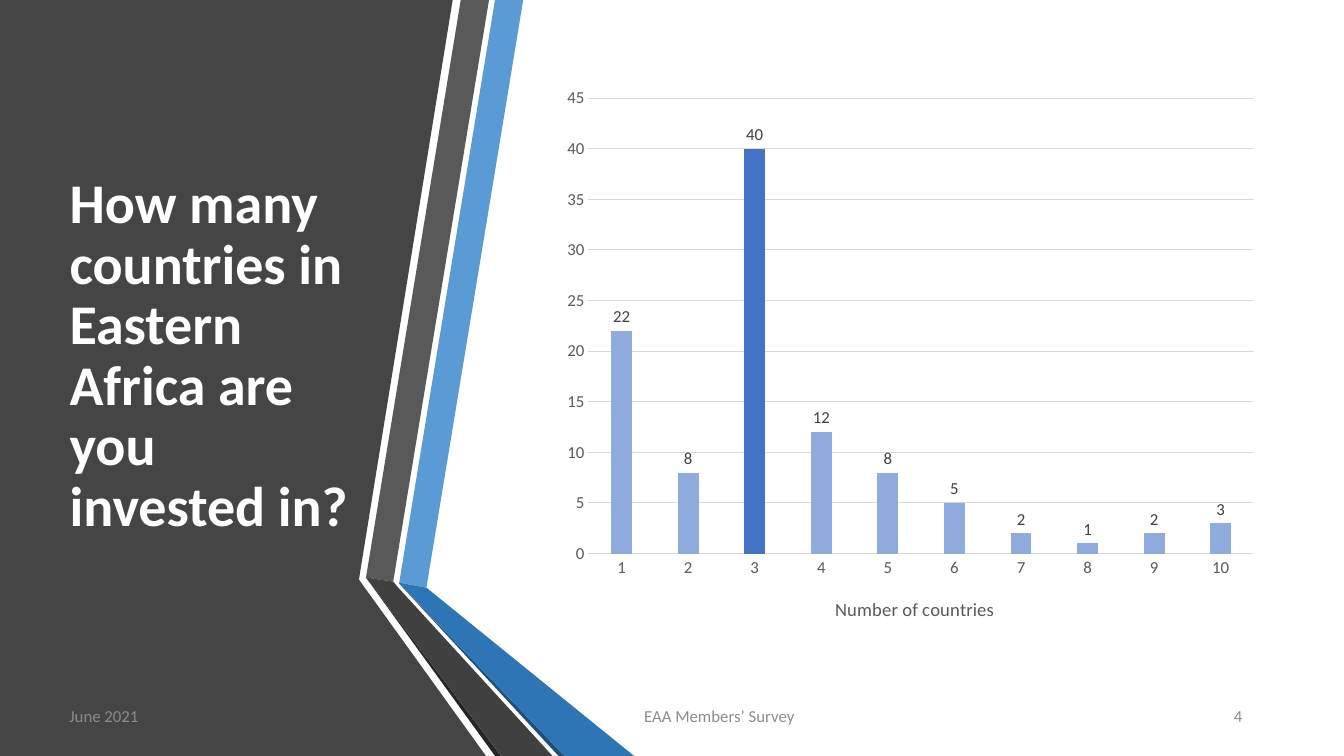
from lxml import etree
from pptx import Presentation
from pptx import util as u
from pptx.chart import data
from pptx.dml.color import RGBColor
from pptx.enum import chart as ch, text

Inches = u.Inches


def color(fmt, hue):
    fmt.solid()
    fmt.fore_color.rgb = RGBColor.from_string(hue)


def write(frame, words, size=12, hue="8C8C8C", bold=False, align="LEFT", after=6, line=1.0):
    frame.word_wrap = True
    frame.auto_size = text.MSO_AUTO_SIZE.NONE
    frame.vertical_anchor = text.MSO_ANCHOR.MIDDLE
    para = frame.paragraphs[0]
    para.alignment = getattr(text.PP_ALIGN, align)
    para.space_before, para.space_after = u.Pt(0), u.Pt(after)
    para.line_spacing = line
    run = para.add_run()
    run.text = words
    run.font.name, run.font.size, run.font.bold = "Calibri", u.Pt(size), bold
    color(run.font.fill, hue)


prs = Presentation()
prs.slide_width, prs.slide_height = Inches(13.33), Inches(7.5)
slide = prs.slides.add_slide(prs.slide_layouts[5])
color(slide.background.fill, "FFFFFF")

# Dark panel, then the folded ribbons as one group
panel = [("454545", [(0, 0), (4.49, 0), (3.56, 5.75), (4.82, 7.5), (0, 7.5)])]
folds = [
    ("5B9BD5", [(3.96, 5.78), (4.23, 5.83), (5.19, 0), (4.91, 0)]),
    ("595959", [(4.85, 0), (4.57, 0), (3.63, 5.73), (3.9, 5.77)]),
    ("262626", [(3.63, 5.73), (4.91, 7.5), (4.97, 7.5)]),
    ("1F4E79", [(3.96, 5.79), (5.54, 7.5), (5.6, 7.5)]),
    ("2E75B6", [(3.96, 5.79), (5.6, 7.5), (6.29, 7.5), (4.23, 5.83), (3.96, 5.78)]),
    ("404040", [(5.48, 7.5), (3.95, 5.83), (3.9, 5.77), (3.63, 5.73), (4.97, 7.5)]),
]
group = slide.shapes.add_group_shape()
for home, parts in ((slide.shapes, panel), (group.shapes, folds)):
    for hue, dots in parts:
        dots = [(Inches(x), Inches(y)) for x, y in dots]
        build = home.build_freeform(*dots[0])
        build.add_line_segments(dots[1:], close=True)
        shape = build.convert_to_shape()
        shape.shadow.inherit = False
        color(shape.fill, hue)
        shape.line.fill.background()

# Title, brought in front of the panel
title = slide.shapes.title
title.left, title.top = Inches(0.59), Inches(0.75)
title.width, title.height = Inches(3.04), Inches(5.58)
write(title.text_frame, "How many countries in Eastern Africa are you invested in?",
      size=40, hue="FFFFFF", bold=True, after=0, line=0.9)
tree = title._element.getparent()
tree.append(title._element)

# Footer line
for words, left, width, align in (
    ("June 2021", 0.59, 3.33, "LEFT"),
    ("EAA Members’ Survey", 6.29, 4.26, "LEFT"),
    ("4", 11.23, 1.19, "RIGHT"),
):
    box = slide.shapes.add_textbox(Inches(left), Inches(6.9), Inches(width), Inches(0.4))
    write(box.text_frame, words, align=align)

# Column chart
info = data.CategoryChartData()
info.categories = [str(n) for n in range(1, 11)]
info.add_series("Series 1", (22, 8, 40, 12, 8, 5, 2, 1, 2, 3))
chart = slide.shapes.add_chart(ch.XL_CHART_TYPE.COLUMN_CLUSTERED, Inches(5.48), Inches(0.75),
                               Inches(7.1), Inches(5.58), info).chart
chart.has_legend = chart.has_title = False
chart.font.name, chart.font.size = "Calibri", u.Pt(10)
color(chart.font.fill, "000000")

plot = chart.plots[0]
plot.gap_width, plot.overlap, plot.vary_by_categories = 219, -27, False
bars = plot.series[0]
color(bars.format.fill, "8FAADC")
color(bars.points[2].format.fill, "4472C4")
labels = bars.data_labels
labels.show_value = True
labels.position = ch.XL_LABEL_POSITION.OUTSIDE_END

# Axes
cats, vals = chart.category_axis, chart.value_axis
for part, hue in ((cats.tick_labels, "595959"), (vals.tick_labels, "595959"), (labels, "404040")):
    part.font.name, part.font.size = "Calibri", u.Pt(12)
    color(part.font.fill, hue)
for axis in (cats, vals):
    axis.major_tick_mark = axis.minor_tick_mark = ch.XL_TICK_MARK.NONE
vals.minimum_scale, vals.maximum_scale, vals.major_unit = 0, 45, 5
vals.has_major_gridlines = True
for line in (cats.format.line, vals.major_gridlines.format.line):
    color(line.fill, "D9D9D9")
    line.width = u.Pt(0.75)
vals.format.line.fill.background()
write(cats.axis_title.text_frame, "Number of countries", size=13.3, hue="595959",
      align="CENTER", after=0)

# Fixed places for the plot area and the axis title
NS = "http://schemas.openxmlformats.org/drawingml/2006/chart"
area = chart._chartSpace.chart.plotArea
name = cats.axis_title._element
for home, spot, rules in (
    (area, 0, dict(layoutTarget="inner", xMode="edge", yMode="edge", x=0.05, y=0.04, w=0.93, h=0.81)),
    (name, 1, dict(xMode="edge", yMode="edge", x=0.39, y=0.92)),
):
    for old in home.findall(f"{{{NS}}}layout"):
        home.remove(old)
    layout = etree.Element(f"{{{NS}}}layout")
    manual = etree.SubElement(layout, f"{{{NS}}}manualLayout")
    for key, val in rules.items():
        etree.SubElement(manual, f"{{{NS}}}{key}").set("val", str(val))
    home.insert(spot, layout)

prs.save("out.pptx")
